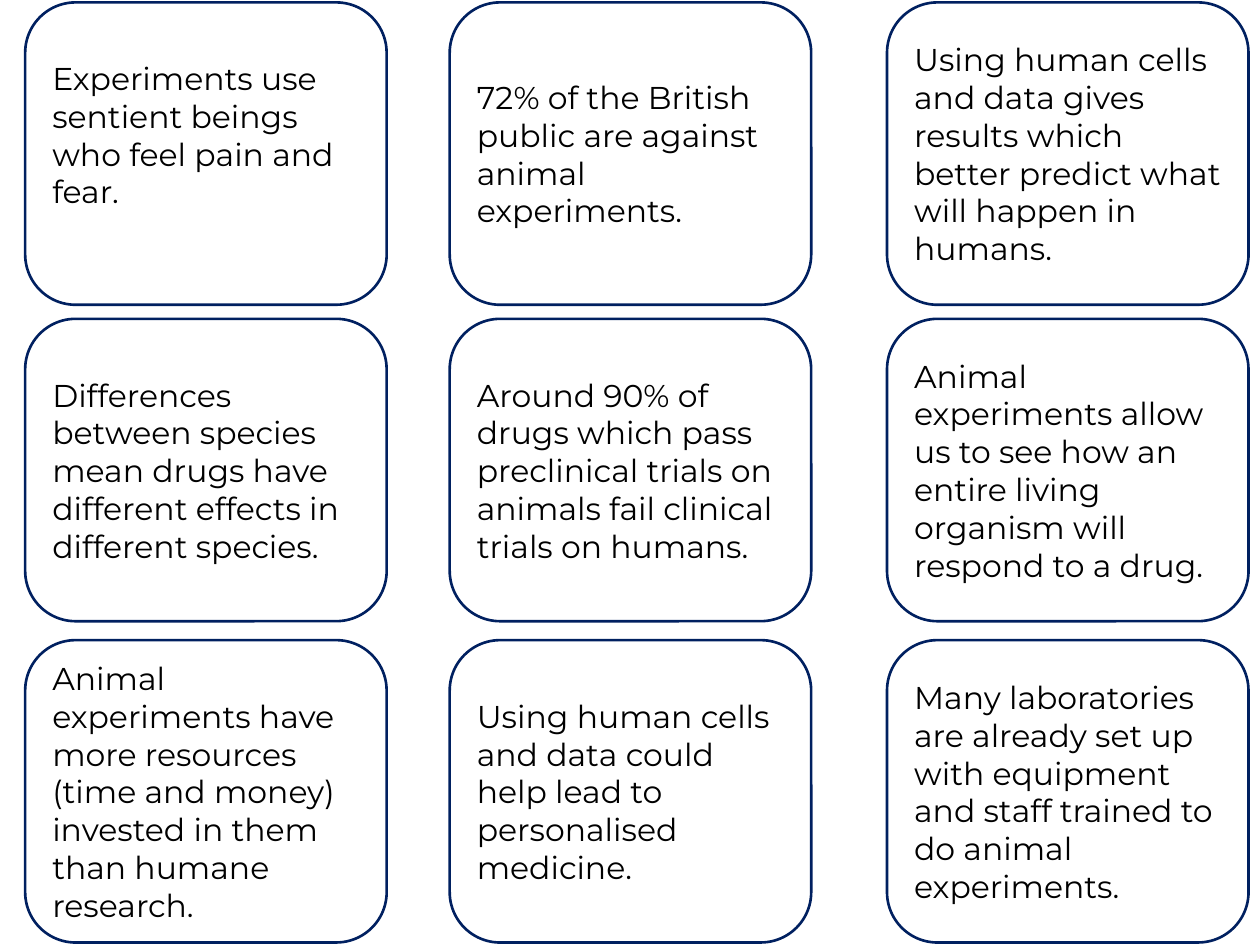
from dataclasses import dataclass

from pptx import Presentation
from pptx.dml.color import RGBColor
from pptx.enum.shapes import MSO_SHAPE
from pptx.enum.text import MSO_ANCHOR, PP_ALIGN
from pptx.util import Pt

ROUNDED_RECTANGLE = MSO_SHAPE.ROUNDED_RECTANGLE
MIDDLE = MSO_ANCHOR.MIDDLE
LEFT = PP_ALIGN.LEFT


@dataclass(frozen=True)
class Theme:
    card_fill: RGBColor = RGBColor(0xFF, 0xFF, 0xFF)
    card_line: RGBColor = RGBColor(0x00, 0x20, 0x60)
    text: RGBColor = RGBColor(0x00, 0x00, 0x00)
    font: str = "Montserrat"
    text_size: float = 18
    line_width: float = 1.5


THEME = Theme()

CARD_WIDTH, CARD_HEIGHT = 206.6, 172.8
COLUMN_LEFTS = (14.4, 257, 506.9)
ROW_TOPS = (1.4, 182.2, 365.8)
BOTTOM_INSET = 3.6
RAISED_BOTTOM_INSET = 25.3

# One inner tuple per column, read from top to bottom.
ARGUMENTS = (
    (
        "Experiments use sentient beings who feel pain and fear.",
        "Differences between species mean drugs have different effects in different species.",
        "Animal experiments have more resources (time and money) invested in them "
        "than humane research.",
    ),
    (
        "72% of the British public are against animal experiments.",
        "Around 90% of drugs which pass preclinical trials on animals fail clinical "
        "trials on humans.",
        "Using human cells and data could help lead to personalised medicine.",
    ),
    (
        "Using human cells and data gives results which better predict what will "
        "happen in humans.",
        "Animal experiments allow us to see how an entire living organism will "
        "respond to a drug.",
        "Many laboratories are already set up with equipment and staff trained to "
        "do animal experiments.",
    ),
)


def add_run(paragraph, text):
    run = paragraph.add_run()
    run.text = text
    run.font.name = THEME.font
    run.font.size = Pt(THEME.text_size)
    run.font.color.rgb = THEME.text


def add_card(slide, left, top, text, bottom_inset):
    shape = slide.shapes.add_shape(
        ROUNDED_RECTANGLE, Pt(left), Pt(top), Pt(CARD_WIDTH), Pt(CARD_HEIGHT)
    )
    shape.shadow.inherit = False
    shape.fill.solid()
    shape.fill.fore_color.rgb = THEME.card_fill
    shape.line.color.rgb = THEME.card_line
    shape.line.width = Pt(THEME.line_width)

    frame = shape.text_frame
    frame.word_wrap = True
    frame.vertical_anchor = MIDDLE
    frame.margin_bottom = Pt(bottom_inset)
    paragraph = frame.paragraphs[0]
    paragraph.alignment = LEFT
    add_run(paragraph, text)


def main():
    presentation = Presentation()
    presentation.slide_width = Pt(720)
    presentation.slide_height = Pt(540)
    slide = presentation.slides.add_slide(presentation.slide_layouts[6])

    for column, (left, texts) in enumerate(zip(COLUMN_LEFTS, ARGUMENTS)):
        for row, (top, text) in enumerate(zip(ROW_TOPS, texts)):
            # The first card's text sits half a line above the middle.
            is_first = column == row == 0
            add_card(slide, left, top, text,
                     RAISED_BOTTOM_INSET if is_first else BOTTOM_INSET)

    presentation.save("out.pptx")


if __name__ == "__main__":
    main()
